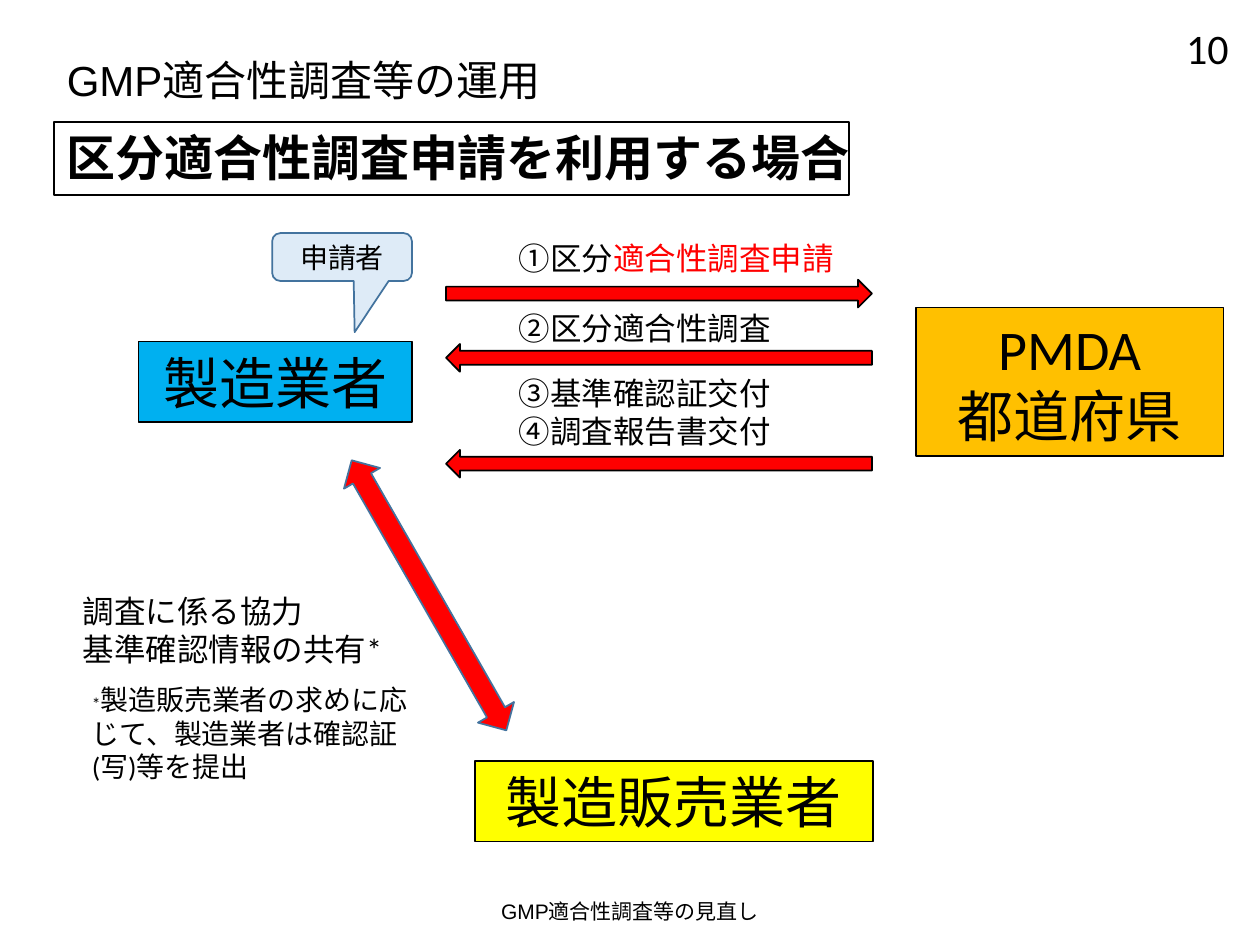
from pptx import Presentation
from pptx.dml.color import RGBColor
from pptx.enum.shapes import MSO_SHAPE
from pptx.enum.text import MSO_ANCHOR, PP_ALIGN
from pptx.util import Inches, Pt

THEME = {
    "black": "000000", "red": "FF0000", "blue": "00B0F0", "yellow": "FFFF00",
    "orange": "FFC000", "pale": "DEEBF7", "edge": "43739E",
    "party": 32, "heading": 28, "title": 24, "label": 18, "note": 16,
    "footer": 12, "mark": 10,
    "latin": "Calibri", "headline": "Arial",
}


def write(box, paragraphs, size, font="latin", align=PP_ALIGN.LEFT,
          anchor=MSO_ANCHOR.TOP, bold=False):
    """Each paragraph is a list of (text, format changes) spans."""
    frame = box.text_frame
    frame.word_wrap = True
    frame.vertical_anchor = anchor
    for index, spans in enumerate(paragraphs):
        para = frame.paragraphs[0] if index == 0 else frame.add_paragraph()
        para.alignment = align
        for text, changes in spans:
            span = para.add_run()
            span.text = text
            formats = {"name": THEME[font], "size": Pt(THEME[size]), "bold": bold}
            if "size" in changes:
                formats["size"] = Pt(THEME[changes["size"]])
            for name, value in formats.items():
                setattr(span.font, name, value)
            color = THEME[changes.get("color", "black")]
            span.font.color.rgb = RGBColor.from_string(color)


def draw(kind, place, fill=None, line="black"):
    shape = page.shapes.add_shape(kind, *map(Inches, place))
    shape.shadow.inherit = False
    if fill:
        shape.fill.solid()
        shape.fill.fore_color.rgb = RGBColor.from_string(THEME[fill])
    else:
        shape.fill.background()
    shape.line.color.rgb = RGBColor.from_string(THEME[line])
    shape.line.width = Pt(1)
    return shape


deck = Presentation()
deck.slide_width, deck.slide_height = Inches(10), Inches(7.5)
page = deck.slides.add_slide(deck.slide_layouts[5])

# Title
title = page.shapes.title
title.left, title.top, title.width, title.height = map(Inches, (0.43, 0.34, 8.79, 0.59))
write(title, [[("GMP適合性調査等の運用", {})]], "title", "headline",
      anchor=MSO_ANCHOR.MIDDLE)

# Parties
for place, fill, names in [
    ((1.1, 2.71, 2.17, 0.64), "blue", ["製造業者"]),
    ((3.77, 6.04, 3.16, 0.64), "yellow", ["製造販売業者"]),
    ((7.27, 2.44, 2.44, 1.18), "orange", ["PMDA", "都道府県"]),
]:
    party = draw(MSO_SHAPE.RECTANGLE, place, fill)
    write(party, [[(name, {})] for name in names], "party",
          align=PP_ALIGN.CENTER, anchor=MSO_ANCHOR.MIDDLE)

# Arrows between manufacturer and authority
for kind, top in [(MSO_SHAPE.RIGHT_ARROW, 2.22), (MSO_SHAPE.LEFT_ARROW, 2.73),
                  (MSO_SHAPE.LEFT_ARROW, 3.57)]:
    draw(kind, (3.54, top, 3.38, 0.22), "red")

# Two-way arrow between manufacturer and marketing holder
exchange = draw(MSO_SHAPE.UP_DOWN_ARROW, (3.24, 3.49, 0.33, 2.47), "red", "edge")
exchange.rotation = 330.2

# Applicant callout
callout = draw(MSO_SHAPE.ROUNDED_RECTANGULAR_CALLOUT, (2.16, 1.85, 1.11, 0.38),
               "pale", "edge")
for index, value in enumerate((0.09, 1.57, 0.17)):
    callout.adjustments[index] = value
write(callout, [[("申請者", {})]], "note", align=PP_ALIGN.CENTER,
      anchor=MSO_ANCHOR.MIDDLE)

# Heading frame
draw(MSO_SHAPE.RECTANGLE, (0.43, 0.97, 6.31, 0.58))

# Heading, step labels, notes, page number and footer
for place, paragraphs, size, options in [
    ((0.43, 0.96, 7.18, 0.5), [[("区分適合性調査申請を利用する場合", {})]],
     "heading", {"font": "headline", "bold": True}),
    ((4.02, 1.85, 2.93, 0.4),
     [[("①区分", {}), ("適合性調査申請", {"color": "red"})]], "label", {}),
    ((4.02, 2.4, 2.55, 0.4), [[("②区分適合性調査", {})]], "label", {}),
    ((4.02, 2.92, 2.45, 0.71),
     [[("③基準確認証交付", {})], [("④調査報告書交付", {})]], "label", {}),
    ((0.56, 4.65, 2.71, 0.71),
     [[("調査に係る協力", {})], [("基準確認情報の共有*", {})]], "label", {}),
    ((0.63, 5.37, 2.91, 0.91),
     [[("*", {"size": "mark"}),
       ("製造販売業者の求めに応じて、製造業者は確認証(写)等を提出", {})]], "note", {}),
    ((7.79, 0.13, 2.06, 0.4), [[("10", {})]], "title", {"align": PP_ALIGN.RIGHT}),
    ((3.31, 7.03, 3.38, 0.4), [[("GMP適合性調査等の見直し", {})]], "footer",
     {"font": "headline", "align": PP_ALIGN.CENTER, "anchor": MSO_ANCHOR.MIDDLE}),
]:
    box = page.shapes.add_textbox(*map(Inches, place))
    write(box, paragraphs, size, **options)

deck.save("out.pptx")
